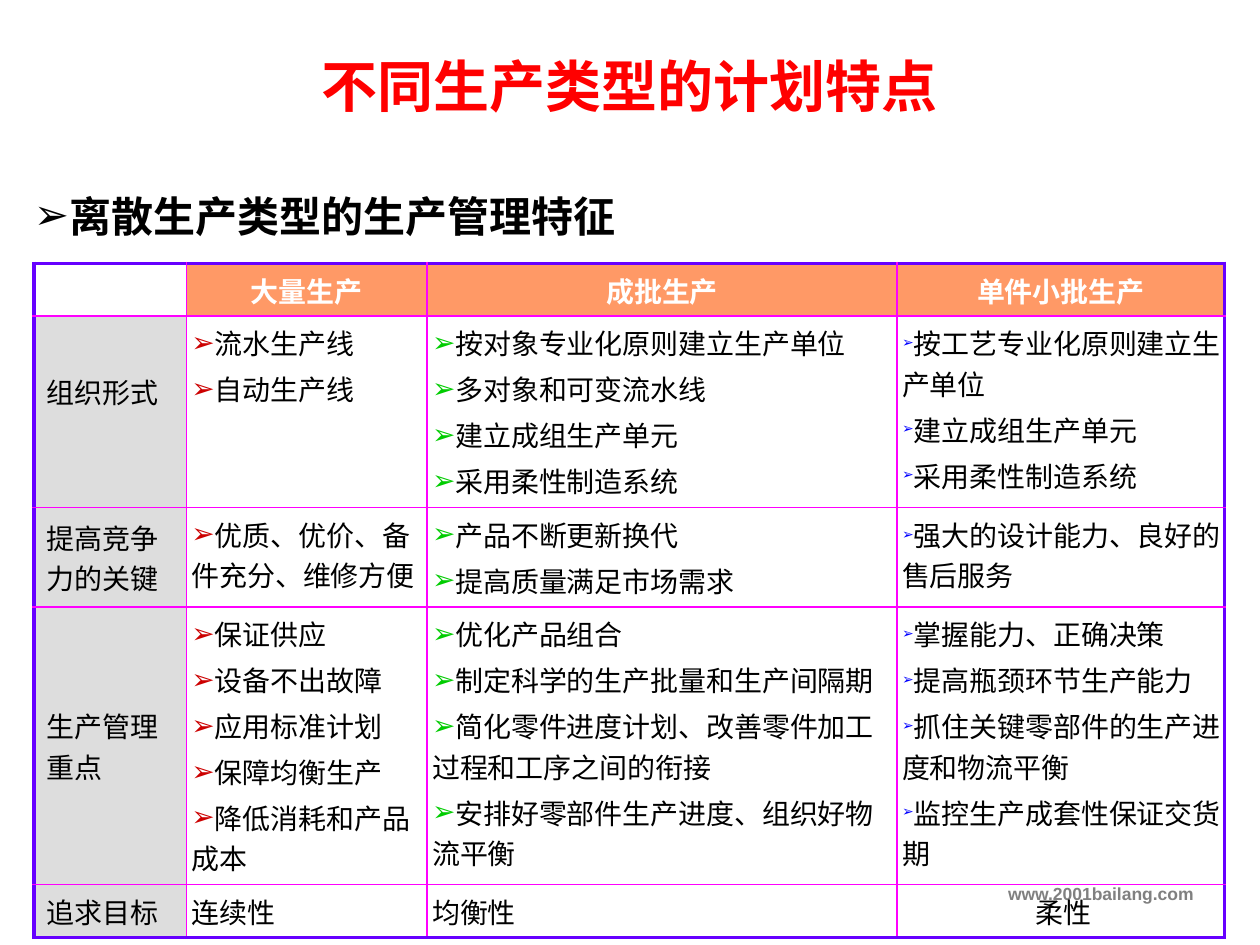
from lxml import etree
from pptx import Presentation
from pptx import util as u
from pptx.dml.color import RGBColor
from pptx.enum import text
from pptx.oxml import parse_xml
from pptx.oxml.ns import nsdecls, qn

PX = 9144  # 100 px to the inch
CJK = "Noto Sans CJK SC"
LEFT, CENTER, RIGHT = text.PP_ALIGN.LEFT, text.PP_ALIGN.CENTER, text.PP_ALIGN.RIGHT


def rgb(value):
    return RGBColor.from_string(value)


def write(tf, lines, color, align=LEFT, bullet=None, name=CJK, **fmt):
    """Fill a text frame; bullet is (colour, percent size)."""
    for i, line in enumerate(lines):
        p = tf.paragraphs[0] if i == 0 else tf.add_paragraph()
        p.alignment = align
        p.space_before = 0 if i == 0 else u.Pt(3.2)
        pPr = p._p.get_or_add_pPr()
        pPr.set("marL", "0")
        pPr.set("indent", "0")
        if bullet:
            clr = etree.SubElement(pPr, qn("a:buClr"))
            etree.SubElement(clr, qn("a:srgbClr"), val=bullet[0])
            etree.SubElement(pPr, qn("a:buSzPct"), val=str(bullet[1] * 1000))
            etree.SubElement(pPr, qn("a:buFont"), typeface="Arial")
            etree.SubElement(pPr, qn("a:buChar"), char="➢")
        else:
            etree.SubElement(pPr, qn("a:buNone"))
        r = p.add_run()
        r.text = line
        r.font.color.rgb = rgb(color)
        for key, value in {"name": name, **fmt}.items():
            setattr(r.font, key, value)
        etree.SubElement(r._r.get_or_add_rPr(), qn("a:ea"), typeface=name)


prs = Presentation()
prs.slide_width, prs.slide_height = 1000 * PX, 750 * PX
s = prs.slides.add_slide(prs.slide_layouts[5])

# Title
title = s.shapes.title
for key, value in {"left": 50, "top": 36, "width": 900, "height": 63}.items():
    setattr(title, key, value * PX)
title.text_frame.vertical_anchor = text.MSO_ANCHOR.MIDDLE
write(title.text_frame, ["不同生产类型的计划特点"], "FF0000", CENTER,
      size=u.Pt(32), bold=True)

# Web address, behind the table
sp = s.shapes.add_textbox(0, 696 * PX, 957 * PX, 35 * PX)
sp.text_frame.word_wrap = True
write(sp.text_frame, ["www.2001bailang.com"], "808080", RIGHT, name="Arial",
      size=u.Pt(10), bold=True)

# Table content: row label, then one list of lines per production type
heads = ["大量生产", "成批生产", "单件小批生产"]
bullets = [("CC0000", 100), ("00CC00", 100), ("0000FF", 50)]
body = [
    ("组织形式",
     ["流水生产线", "自动生产线"],
     ["按对象专业化原则建立生产单位", "多对象和可变流水线",
      "建立成组生产单元", "采用柔性制造系统"],
     ["按工艺专业化原则建立生产单位", "建立成组生产单元", "采用柔性制造系统"]),
    ("提高竞争力的关键",
     ["优质、优价、备件充分、维修方便"],
     ["产品不断更新换代", "提高质量满足市场需求"],
     ["强大的设计能力、良好的售后服务"]),
    ("生产管理重点",
     ["保证供应", "设备不出故障", "应用标准计划", "保障均衡生产", "降低消耗和产品成本"],
     ["优化产品组合", "制定科学的生产批量和生产间隔期",
      "简化零件进度计划、改善零件加工过程和工序之间的衔接",
      "安排好零部件生产进度、组织好物流平衡"],
     ["掌握能力、正确决策", "提高瓶颈环节生产能力",
      "抓住关键零部件的生产进度和物流平衡", "监控生产成套性保证交货期"]),
    ("追求目标", ["连续性"], ["均衡性"], ["柔性"]),
]
widths = [121, 191, 373, 260]
heights = [42, 152, 79, 220, 42]
last_row, last_col = len(heights) - 1, len(widths) - 1

tbl = s.shapes.add_table(len(heights), len(widths), 27 * PX, 209 * PX,
                         sum(widths) * PX, sum(heights) * PX).table
tbl.first_row = tbl.horz_banding = False
for col, width in zip(tbl.columns, widths):
    col.width = width * PX
for row, height in zip(tbl.rows, heights):
    row.height = height * PX

for i in range(len(heights)):
    for j in range(len(widths)):
        cell = tbl.cell(i, j)
        # Violet outer frame, magenta inner lines
        edges = {"L": j == 0, "R": j == last_col, "T": i == 0, "B": i == last_row}
        for side, outer in edges.items():
            color, weight = ("6600FF", 2.25) if outer else ("FF00FF", 1)
            cell._tc.get_or_add_tcPr().append(parse_xml(
                f'<a:ln{side} {nsdecls("a")} w="{u.Pt(weight)}"><a:solidFill>'
                f'<a:srgbClr val="{color}"/></a:solidFill></a:ln{side}>'))
        # Fill
        fill = "FF9966" if i == 0 and j else "DDDDDD" if i and j == 0 else None
        if fill:
            cell.fill.solid()
            cell.fill.fore_color.rgb = rgb(fill)
        else:
            cell.fill.background()
        # Text
        fmt = {"size": u.Pt(16), "bold": i == 0}
        if i == 0 and j:
            write(cell.text_frame, [heads[j - 1]], "FFFFFF", CENTER, **fmt)
        elif i and j == 0:
            cell.vertical_anchor = text.MSO_ANCHOR.MIDDLE
            write(cell.text_frame, [body[i - 1][0]], "000000", **fmt)
        elif i:
            cell.margin_left, cell.margin_right = 4 * PX, 0
            goal = i == last_row
            write(cell.text_frame, body[i - 1][j], "000000",
                  CENTER if goal and j == last_col else LEFT,
                  None if goal else bullets[j - 1], **fmt)

# The first row label sits above the middle of its cell
tbl.cell(1, 0).margin_bottom = 38 * PX

# Subheading
sp = s.shapes.add_textbox(15 * PX, 146 * PX, 485 * PX, 50 * PX)
sp.text_frame.word_wrap = False
sp.text_frame.auto_size = text.MSO_AUTO_SIZE.SHAPE_TO_FIT_TEXT
write(sp.text_frame, ["离散生产类型的生产管理特征"], "000000", CENTER,
      ("000000", 100), size=u.Pt(24), bold=True)

prs.save("out.pptx")
